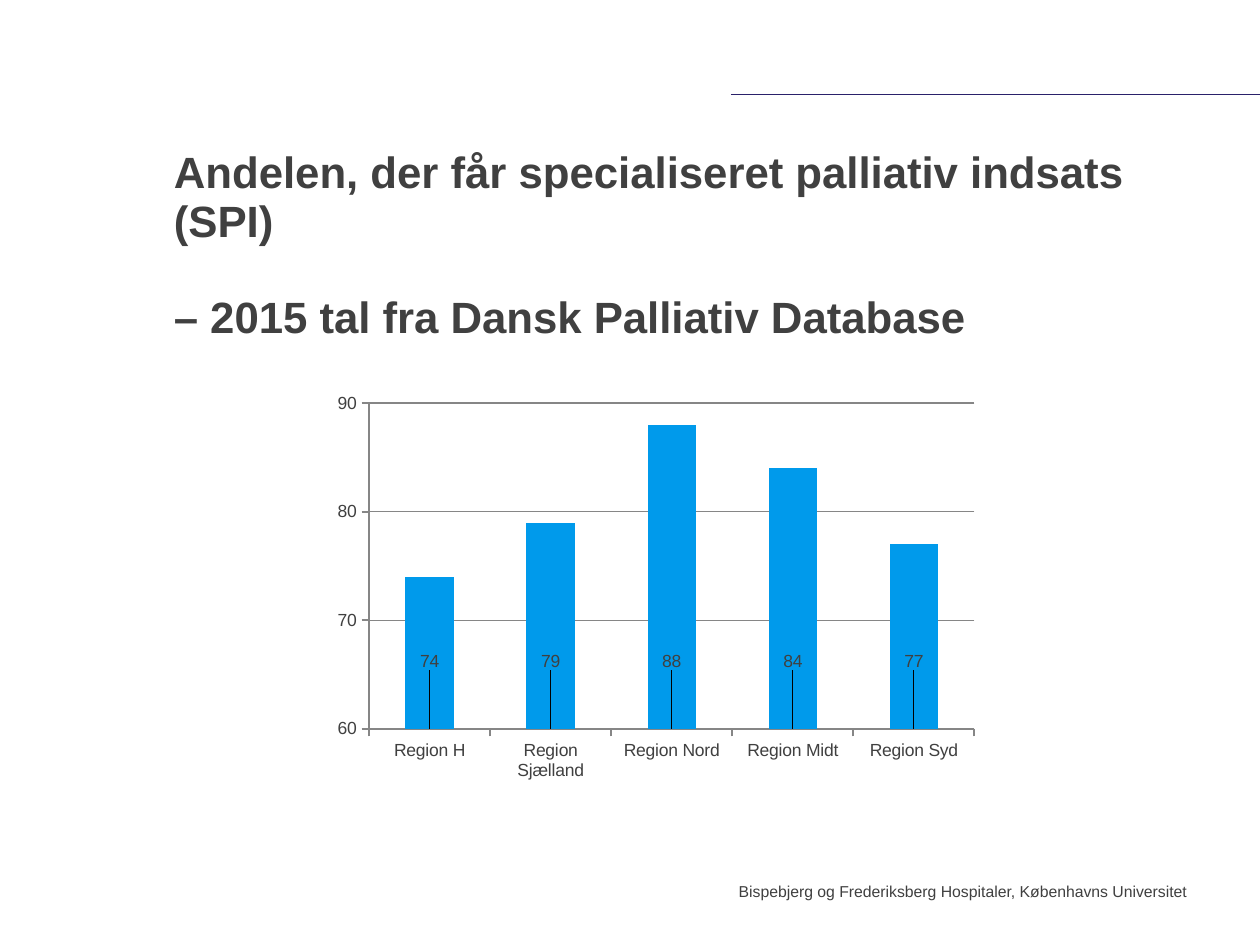
import pptx
import pptx.chart.data
import pptx.dml.color
import pptx.enum.chart
import pptx.enum.shapes
import pptx.enum.text
import pptx.oxml
import pptx.oxml.ns
import pptx.util

SLIDE_WIDTH, SLIDE_HEIGHT = 10, 7.5
FONT = "Arial"
COLORS = {"text": "404040", "rule": "2A216A", "bar": "009AEB",
          "grid": "868686", "label": "FFFFFF"}
REGIONS = {"Region H": 74, "Region Sjælland": 79, "Region Nord": 88,
           "Region Midt": 84, "Region Syd": 77}


def color(name):
    return pptx.dml.color.RGBColor.from_string(COLORS[name])


def box(left, top, width, height):
    """Turn shares of the slide's size into lengths."""
    return [pptx.util.Inches(share * size) for share, size in
            zip((left, top, width, height), (SLIDE_WIDTH, SLIDE_HEIGHT) * 2)]


def style_font(font, size, bold=False):
    font.name = FONT
    font.size = pptx.util.Pt(size)
    font.bold = bold
    font.color.rgb = color("text")


def style_line(line, name, width):
    line.color.rgb = color(name)
    line.width = pptx.util.Pt(width)


def add_text(slide, place, lines, size, bold=False, align="LEFT",
             anchor="TOP", line_spacing=1.0, gap=0):
    text_frame = slide.shapes.add_textbox(*place).text_frame
    text_frame.word_wrap = True
    text_frame.margin_left = text_frame.margin_right = 0
    text_frame.margin_top = text_frame.margin_bottom = 0
    text_frame.vertical_anchor = pptx.enum.text.MSO_ANCHOR[anchor]
    text_frame.text = "\n".join(lines)
    for index, paragraph in enumerate(text_frame.paragraphs):
        paragraph.alignment = pptx.enum.text.PP_ALIGN[align]
        paragraph.line_spacing = line_spacing
        if index:
            paragraph.space_before = pptx.util.Pt(gap)
        for run in paragraph.runs:
            style_font(run.font, size, bold)


def add_rule(slide, start, end, height):
    left, top, width, _ = box(start, height, end - start, 0)
    rule = slide.shapes.add_connector(
        pptx.enum.shapes.MSO_CONNECTOR.STRAIGHT, left, top, left + width, top)
    style_line(rule.line, "rule", 0.5)
    rule._element.spPr.append(pptx.oxml.parse_xml(
        f'<a:effectLst {pptx.oxml.ns.nsdecls("a")}/>'))


def set_plot_area(chart, left, top, width, height):
    """Fix the inner plot area, in shares of the chart's size."""
    plot_area = chart._chartSpace.chart.plotArea
    for layout in plot_area.findall(pptx.oxml.ns.qn("c:layout")):
        plot_area.remove(layout)
    plot_area.insert(0, pptx.oxml.parse_xml(
        f'<c:layout {pptx.oxml.ns.nsdecls("c")}><c:manualLayout>'
        '<c:layoutTarget val="inner"/><c:xMode val="edge"/>'
        f'<c:yMode val="edge"/><c:x val="{left}"/><c:y val="{top}"/>'
        f'<c:w val="{width}"/><c:h val="{height}"/>'
        '</c:manualLayout></c:layout>'))


def add_bar_label(point, shift):
    """Show the value on white, moved by a share of the chart's height."""
    label = point.data_label
    label.position = pptx.enum.chart.XL_LABEL_POSITION.INSIDE_BASE
    index = point._ser.dLbls.dLbl_lst[-1].find(pptx.oxml.ns.qn("c:idx"))
    namespaces = pptx.oxml.ns.nsdecls("c", "a")
    index.addnext(pptx.oxml.parse_xml(
        f'<c:spPr {namespaces}><a:solidFill>'
        f'<a:srgbClr val="{COLORS["label"]}"/></a:solidFill></c:spPr>'))
    index.addnext(pptx.oxml.parse_xml(
        f'<c:layout {namespaces}><c:manualLayout><c:x val="0"/>'
        f'<c:y val="{shift}"/></c:manualLayout></c:layout>'))


def add_region_chart(slide, place):
    data = pptx.chart.data.CategoryChartData()
    data.categories = list(REGIONS)
    data.add_series("Series 1", list(REGIONS.values()))
    chart = slide.shapes.add_chart(
        pptx.enum.chart.XL_CHART_TYPE.COLUMN_CLUSTERED, *place, data).chart
    chart.has_legend = False
    chart.has_title = False
    style_font(chart.font, 10)
    set_plot_area(chart, 0.07, 0.05, 0.91, 0.8)

    # Axes
    value_axis = chart.value_axis
    value_axis.minimum_scale, value_axis.maximum_scale = 60, 90
    value_axis.major_unit = 10
    value_axis.has_major_gridlines = True
    style_line(value_axis.major_gridlines.format.line, "grid", 0.75)
    for axis in (value_axis, chart.category_axis):
        axis.major_tick_mark = pptx.enum.chart.XL_TICK_MARK.OUTSIDE
        style_line(axis.format.line, "grid", 1)

    # Bars and their labels
    plot = chart.plots[0]
    plot.gap_width = 150
    plot.vary_by_categories = False
    series = plot.series[0]
    series.format.fill.solid()
    series.format.fill.fore_color.rgb = color("bar")
    for index in range(len(REGIONS)):
        add_bar_label(series.points[index], -0.13)


def main():
    presentation = pptx.Presentation()
    presentation.slide_width = pptx.util.Inches(SLIDE_WIDTH)
    presentation.slide_height = pptx.util.Inches(SLIDE_HEIGHT)
    slide = presentation.slides.add_slide(presentation.slide_layouts[6])

    # Header rule and title
    add_rule(slide, 0.58, 1, 0.1)
    add_text(slide, box(0.138, 0.227, 0.792, 0.136),
             ["Andelen, der får specialiseret palliativ indsats (SPI)",
              "– 2015 tal fra Dansk Palliativ Database"],
             25, bold=True, anchor="BOTTOM", line_spacing=0.93, gap=26.7)

    # Share per region
    add_region_chart(slide, box(0.256, 0.405, 0.528, 0.431))

    # Footer
    add_text(slide, box(0.516, 0.933, 0.426, 0.067),
             ["Bispebjerg og Frederiksberg Hospitaler, Københavns Universitet"],
             9, align="RIGHT")

    presentation.save("out.pptx")


if __name__ == "__main__":
    main()
